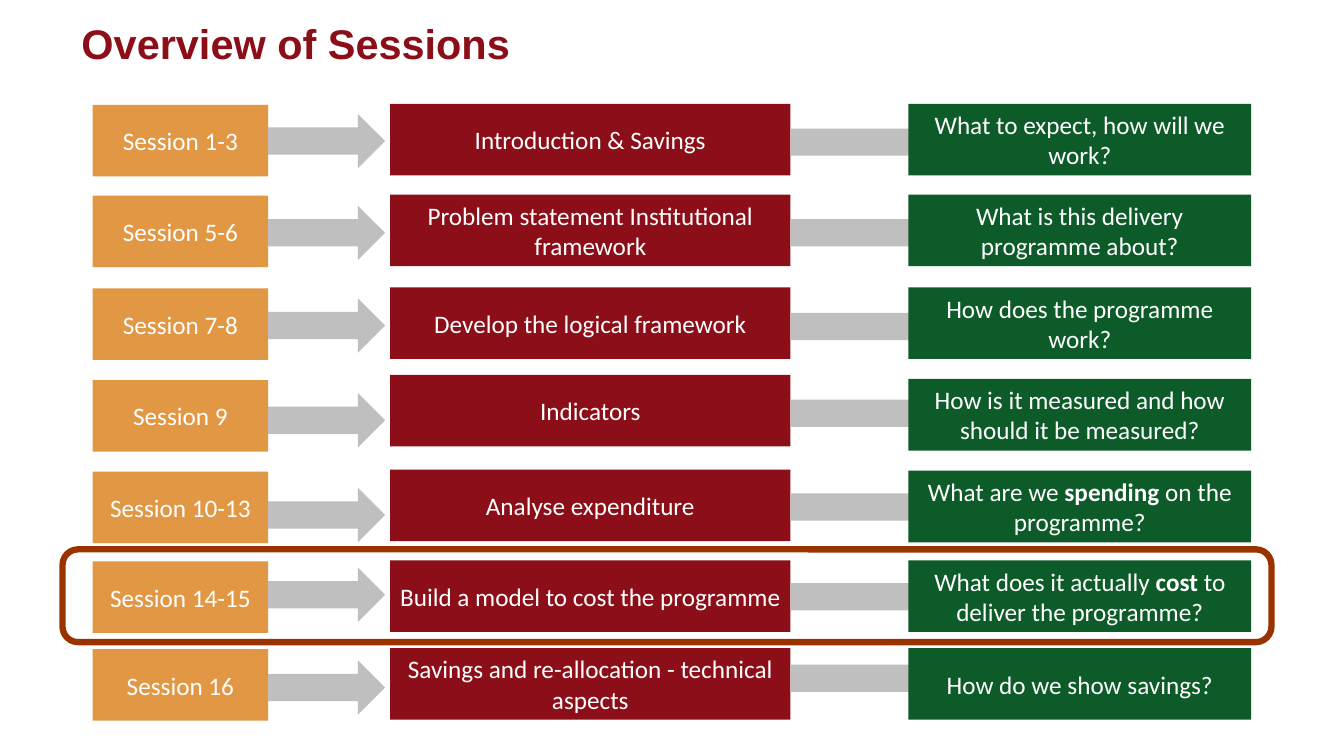
from collections import namedtuple

from pptx import Presentation
from pptx.dml.color import RGBColor
from pptx.enum.shapes import MSO_SHAPE as Shape
from pptx.enum.text import MSO_ANCHOR as Anchor, PP_ALIGN as Align
from pptx.util import Inches, Pt

WHITE = RGBColor(0xFF, 0xFF, 0xFF)
RED = RGBColor(0x8B, 0x0E, 0x18)
ORANGE = RGBColor(0xE2, 0x97, 0x44)
GREEN = RGBColor(0x0E, 0x5B, 0x2A)
GREY = RGBColor(0xBF, 0xBF, 0xBF)
RUST = RGBColor(0x99, 0x33, 0x00)

Box = namedtuple("Box", "left top width height")
Row = namedtuple("Row", "top topic_top arrow_top link_top session topic question")

ROW_LEFT, ROW_WIDTH, BOX_HEIGHT = 0.92, 11.49, 0.71
SESSION_WIDTH, TOPIC_WIDTH, QUESTION_WIDTH = 1.74, 3.97, 3.4
TOPIC_OFFSET = 2.95
ARROW_WIDTH, LINK_WIDTH, ARROW_HEIGHT = 1.16, 1.56, 0.54

ROWS = [
    Row(1.03, 1.03, 1.13, 1.14, "Session 1-3", "Introduction & Savings",
        ["What to expect, how will we work?"]),
    Row(1.93, 1.93, 2.04, 2.04, "Session 5-6",
        "Problem statement Institutional framework",
        ["What is this delivery programme about?"]),
    Row(2.85, 2.85, 2.96, 2.97, "Session 7-8", "Develop the logical framework",
        ["How does the programme work?"]),
    Row(3.76, 3.72, 3.9, 3.83, "Session 9", "Indicators",
        ["How is it measured and how should it be measured?"]),
    Row(4.67, 4.66, 4.84, 4.76, "Session 10-13", "Analyse expenditure",
        ["What are we ", "spending ", "on the programme?"]),
    Row(5.56, 5.56, 5.63, 5.65, "Session 14-15",
        "Build a model to cost the programme",
        ["What does it actually ", "cost", " to deliver the programme?"]),
    Row(6.43, 6.43, 6.55, 6.46, "Session 16",
        "Savings and re-allocation - technical aspects",
        ["How do we show savings?"]),
]


def write_text(shape, parts, size=18, font="Calibri", color=WHITE,
               align=Align.CENTER, bold=False):
    frame = shape.text_frame
    frame.word_wrap = True
    frame.vertical_anchor = Anchor.MIDDLE
    para = frame.paragraphs[0]
    para.alignment = align
    for index, part in enumerate(parts):
        span = para.add_run()
        span.text = part
        span.font.size = Pt(size)
        span.font.name = font
        span.font.color.rgb = color
        span.font.bold = bold or index % 2 == 1


def add_block(page, kind, box, fill=None, line=None, line_width=0):
    shape = page.shapes.add_shape(kind, *map(Inches, box))
    shape.shadow.inherit = False
    if fill is None:
        shape.fill.background()
    else:
        shape.fill.solid()
        shape.fill.fore_color.rgb = fill
    if line is None:
        shape.line.fill.background()
    else:
        shape.line.color.rgb = line
        shape.line.width = Pt(line_width)
    return shape


def add_title(page, box, text):
    title = page.shapes.add_textbox(*map(Inches, box))
    write_text(title, [text], size=29.6, font="Arial", color=RED,
               align=Align.LEFT, bold=True)


def add_session_row(page, box, row):
    session_right = box.left + SESSION_WIDTH
    topic_left = box.left + TOPIC_OFFSET
    topic_right = topic_left + TOPIC_WIDTH
    question_left = box.left + box.width - QUESTION_WIDTH

    session = add_block(page, Shape.RECTANGLE,
                        Box(box.left, box.top + 0.01, SESSION_WIDTH, box.height), ORANGE)
    write_text(session, [row.session])
    topic = add_block(page, Shape.RECTANGLE,
                      Box(topic_left, row.topic_top, TOPIC_WIDTH, box.height), RED)
    write_text(topic, [row.topic])
    add_block(page, Shape.RIGHT_ARROW,
              Box(session_right, row.arrow_top, ARROW_WIDTH, ARROW_HEIGHT), GREY)
    add_block(page, Shape.RIGHT_ARROW,
              Box(topic_right, row.link_top, LINK_WIDTH, ARROW_HEIGHT), GREY)
    question = add_block(page, Shape.RECTANGLE,
                         Box(question_left, box.top, QUESTION_WIDTH, box.height), GREEN)
    write_text(question, row.question)


def add_highlight(page, box):
    add_block(page, Shape.ROUNDED_RECTANGLE, box, line=RUST, line_width=4.5)


def main():
    deck = Presentation()
    deck.slide_width, deck.slide_height = Inches(13.33), Inches(7.5)
    page = deck.slides.add_slide(deck.slide_layouts[6])
    add_title(page, Box(0.71, 0.2, 11.51, 0.45), "Overview of Sessions")
    for row in ROWS:
        add_session_row(page, Box(ROW_LEFT, row.top, ROW_WIDTH, BOX_HEIGHT), row)
    add_highlight(page, Box(0.62, 5.45, 11.99, 0.92))
    deck.save("out.pptx")


if __name__ == "__main__":
    main()
